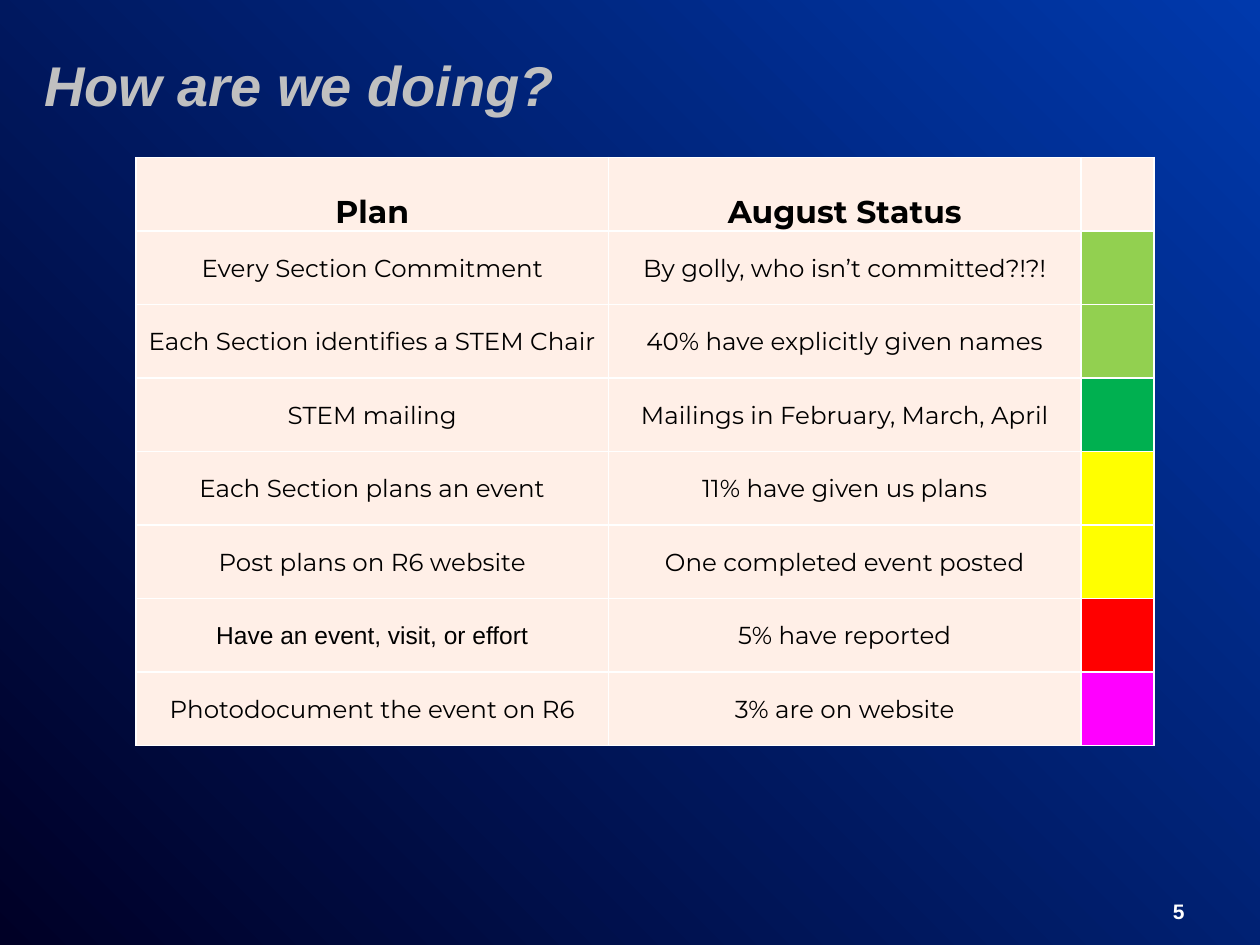
from dataclasses import dataclass

from lxml.etree import SubElement
from pptx import Presentation
from pptx.dml.color import RGBColor
from pptx.enum.text import MSO_ANCHOR as Anchor, PP_ALIGN as Align
from pptx.oxml.ns import qn
from pptx.util import Inches, Pt

COLORS = {
    "bg_dark": "000026", "bg_light": "0039AC",
    "title": "C0C0C0", "text": "000000", "white": "FFFFFF", "cell": "FFEFE7",
    "light_green": "92D050", "green": "00B050", "yellow": "FFFF00",
    "red": "FF0000", "magenta": "FF00FF",
}


@dataclass
class PlanRow:
    plan: str
    status: str
    signal: str
    plan_font: str = "Montserrat"


HEADER = PlanRow("Plan", "August Status", "cell")
ROWS = [
    PlanRow("Every Section Commitment", "By golly, who isn’t committed?!?!", "light_green"),
    PlanRow("Each Section identifies a STEM Chair", "40% have explicitly given names", "light_green"),
    PlanRow("STEM mailing", "Mailings in February, March, April", "green"),
    PlanRow("Each Section plans an event", "11% have given us plans", "yellow"),
    PlanRow("Post plans on R6 website", "One completed event posted", "yellow"),
    PlanRow("Have an event, visit, or effort", "5% have reported", "red", "Arial"),
    PlanRow("Photodocument the event on R6", "3% are on website", "magenta"),
]
COL_WIDTHS = (3.75, 3.75, 0.58)
ROW_HEIGHT = 4.67 / (len(ROWS) + 1)


def rgb(name: str) -> RGBColor:
    return RGBColor.from_string(COLORS[name])


def add_run(p, text: str, size: float, color: str, font: str = "Arial",
            bold: bool = False, italic: bool = False) -> None:
    r = p.add_run()
    r.text = text
    r.font.size, r.font.name = Pt(size), font
    r.font.bold, r.font.italic = bold, italic
    r.font.color.rgb = rgb(color)


def style_cell(cell, fill: str) -> None:
    """White one-point borders, a solid fill and tight margins."""
    tc_pr = cell._tc.get_or_add_tcPr()
    for side in ("a:lnL", "a:lnR", "a:lnT", "a:lnB"):
        ln = SubElement(tc_pr, qn(side), w=str(Pt(1)))
        solid = SubElement(ln, qn("a:solidFill"))
        SubElement(solid, qn("a:srgbClr"), val=COLORS["white"])
    cell.fill.solid()
    cell.fill.fore_color.rgb = rgb(fill)
    cell.margin_left = cell.margin_right = cell.margin_top = Inches(0.01)
    cell.margin_bottom = 0


def fill_row(table, index: int, row: PlanRow) -> None:
    is_header = index == 0
    for col, (text, font) in enumerate(
            [(row.plan, row.plan_font), (row.status, "Montserrat")]):
        cell = table.cell(index, col)
        style_cell(cell, "cell")
        cell.vertical_anchor = Anchor.BOTTOM if is_header else Anchor.MIDDLE
        p = cell.text_frame.paragraphs[0]
        p.alignment = Align.CENTER
        add_run(p, text, 18 if is_header else 14, "text", font, bold=is_header)
    style_cell(table.cell(index, 2), row.signal)


def main() -> None:
    prs = Presentation()
    prs.slide_width, prs.slide_height = Inches(10), Inches(7.5)
    s = prs.slides.add_slide(prs.slide_layouts[5])

    # Background, dark at bottom left to light at top right
    bg = s.background.fill
    bg.gradient()
    bg.gradient_angle = 45
    for stop, name in zip(bg.gradient_stops, ("bg_dark", "bg_light")):
        stop.color.rgb = rgb(name)

    # Title
    title = s.shapes.title
    title.left, title.top = Inches(0.25), Inches(0.17)
    title.width, title.height = Inches(9.5), Inches(1)
    tf = title.text_frame
    tf.vertical_anchor = Anchor.MIDDLE
    p = tf.paragraphs[0]
    p.alignment = Align.LEFT
    add_run(p, "How are we doing?", 32, "title", bold=True, italic=True)

    # Status table
    rows = [HEADER, *ROWS]
    table = s.shapes.add_table(
        len(rows), len(COL_WIDTHS), Inches(1.08), Inches(1.25),
        Inches(sum(COL_WIDTHS)), Inches(ROW_HEIGHT * len(rows))).table
    for column, width in zip(table.columns, COL_WIDTHS):
        column.width = Inches(width)
    for index, row in enumerate(rows):
        table.rows[index].height = Inches(ROW_HEIGHT)
        fill_row(table, index, row)

    # Page number
    sp = s.shapes.add_textbox(Inches(7.42), Inches(7.08), Inches(2.08), Inches(0.25))
    tf = sp.text_frame
    tf.word_wrap = True
    p = tf.paragraphs[0]
    p.alignment = Align.RIGHT
    add_run(p, "5", 12, "white", bold=True)

    prs.save("out.pptx")


if __name__ == "__main__":
    main()
